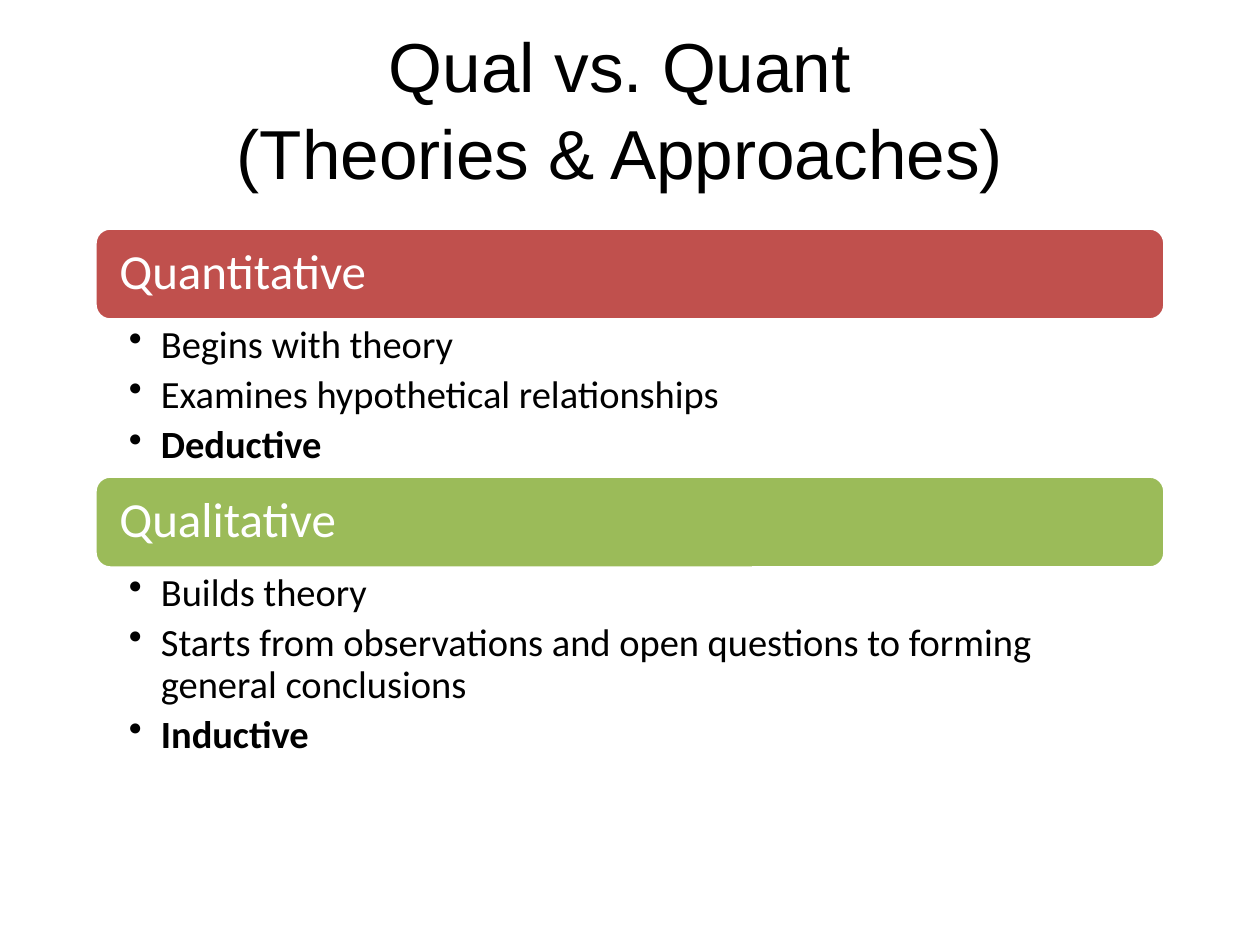
from lxml import etree
from pptx import Presentation
from pptx import util as u
from pptx.dml.color import RGBColor
from pptx.enum import shapes, text
from pptx.oxml import ns

BLACK = RGBColor(0x00, 0x00, 0x00)
WHITE = RGBColor(0xFF, 0xFF, 0xFF)
RED = RGBColor(0xC0, 0x50, 0x4D)
GREEN = RGBColor(0x9B, 0xBB, 0x59)

SCALE = 914400 / 126  # EMU in one px
LEFT, WIDTH, BAR_HEIGHT = 95, 1070, 92
BULLET_INDENT = 32

SECTIONS = [
    ("Quantitative", RED, 156,
     ["Begins with theory", "Examines hypothetical relationships", "Deductive"]),
    ("Qualitative", GREEN, 199,
     ["Builds theory",
      "Starts from observations and open questions to forming general conclusions",
      "Inductive"]),
]


def px(*lengths):
    return [u.Emu(round(length * SCALE)) for length in lengths]


def set_frame(frame, insets, anchor):
    """Wrap the text, with insets in px as left, top, right, bottom."""
    frame.word_wrap = True
    frame.auto_size = text.MSO_AUTO_SIZE.NONE
    frame.vertical_anchor = anchor
    (frame.margin_left, frame.margin_top,
     frame.margin_right, frame.margin_bottom) = px(*insets)


deck = Presentation()
deck.slide_width, deck.slide_height = px(1260, 945)
page = deck.slides.add_slide(deck.slide_layouts[5])

title = page.shapes.title
title.left, title.top, title.width, title.height = px(55, 14, 1149, 185)
set_frame(title.text_frame, (6, 6, 25, 6), text.MSO_ANCHOR.MIDDLE)
para = title.text_frame.paragraphs[0]
para.alignment = text.PP_ALIGN.CENTER
para.line_spacing = 1.05
for number, line in enumerate(["Qual vs. Quant", "(Theories & Approaches)"]):
    if number:
        para.add_line_break()
    span = para.add_run()
    span.text = line
    span.font.name = "Arial"
    span.font.size = u.Pt(39.6)
    span.font.color.rgb = BLACK

top = 228
for heading, colour, body_height, points in SECTIONS:
    bar = page.shapes.add_shape(shapes.MSO_SHAPE.ROUNDED_RECTANGLE,
                                *px(LEFT, top, WIDTH, BAR_HEIGHT))
    bar.shadow.inherit = False
    bar.fill.solid()
    bar.fill.fore_color.rgb = colour
    bar.line.color.rgb = WHITE
    bar.line.width = u.Pt(2)
    set_frame(bar.text_frame, (20, 15, 20, 15), text.MSO_ANCHOR.MIDDLE)
    para = bar.text_frame.paragraphs[0]
    para.alignment = text.PP_ALIGN.LEFT
    para.line_spacing = 0.9
    span = para.add_run()
    span.text = heading
    span.font.name = "Calibri"
    span.font.size = u.Pt(28)
    span.font.color.rgb = WHITE
    top += BAR_HEIGHT

    box = page.shapes.add_textbox(*px(LEFT, top, WIDTH, body_height))
    set_frame(box.text_frame, (34, 5, 28, 5), text.MSO_ANCHOR.TOP)
    for number, point in enumerate(points):
        para = box.text_frame.add_paragraph() if number else box.text_frame.paragraphs[0]
        para.level = 1
        para.line_spacing = 0.9
        para.space_after = u.Pt(5)
        properties = para._p.get_or_add_pPr()
        indent = px(BULLET_INDENT)[0]
        properties.set("marL", str(indent))
        properties.set("indent", str(-indent))
        etree.SubElement(properties, ns.qn("a:buChar"), char="•")
        span = para.add_run()
        span.text = point
        span.font.name = "Calibri"
        span.font.size = u.Pt(22)
        span.font.bold = point == points[-1]
        span.font.color.rgb = BLACK
    top += body_height

deck.save("out.pptx")
